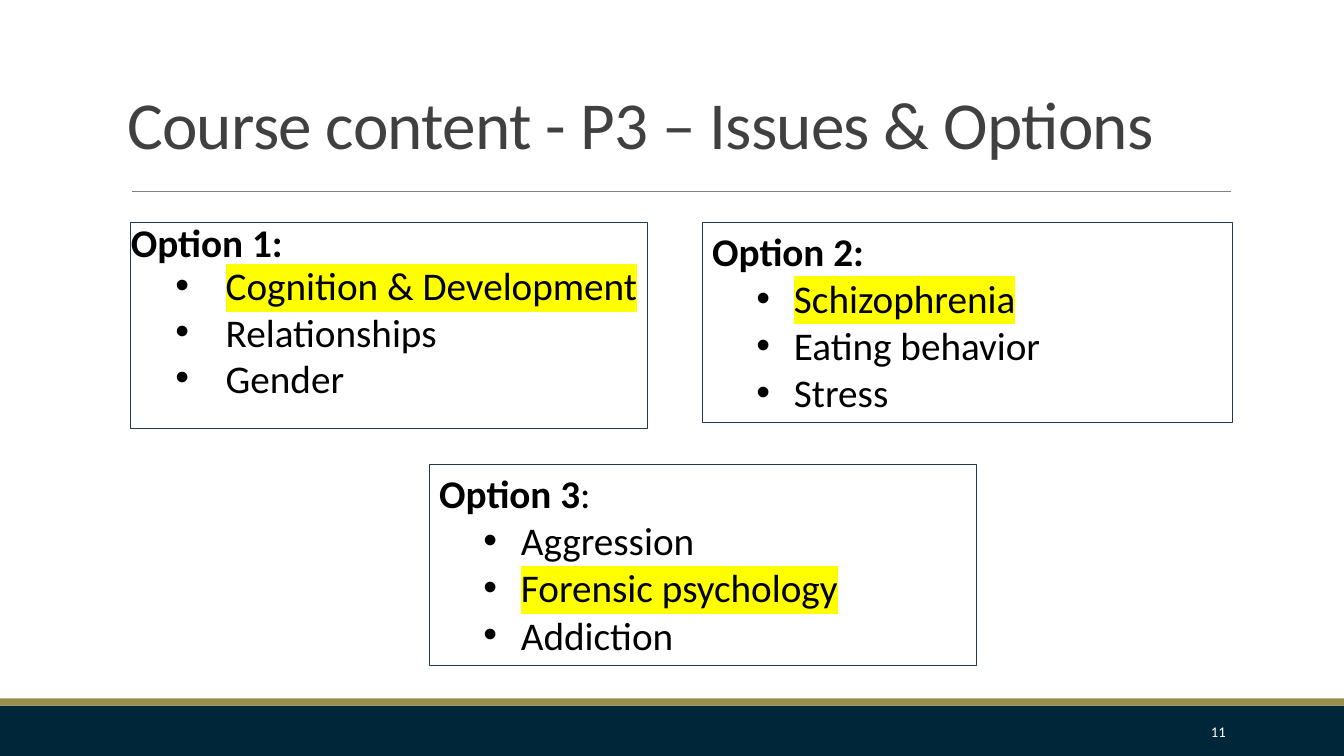
from dataclasses import dataclass
from typing import Any

from lxml.etree import SubElement
from pptx import Presentation
from pptx.dml.color import RGBColor
from pptx.enum.shapes import MSO_CONNECTOR, MSO_SHAPE
from pptx.enum.text import MSO_ANCHOR, MSO_AUTO_SIZE, PP_ALIGN
from pptx.oxml.ns import qn
from pptx.slide import Slide
from pptx.text.text import _Paragraph as Paragraph
from pptx.util import Cm, Pt

NAVY = RGBColor(0x00, 0x26, 0x39)
GOLD = RGBColor(0x99, 0x8F, 0x4D)
GRAY = RGBColor(0x80, 0x80, 0x80)
DARK_GRAY = RGBColor(0x40, 0x40, 0x40)
BORDER = RGBColor(0x20, 0x3A, 0x4E)
BLACK = RGBColor(0x00, 0x00, 0x00)
WHITE = RGBColor(0xFF, 0xFF, 0xFF)
YELLOW = RGBColor(0xFF, 0xFF, 0x00)

FONT = "Calibri"
SLIDE_WIDTH, SLIDE_HEIGHT = 33.87, 19.05


@dataclass(frozen=True)
class Area:
    left: float
    top: float
    width: float
    height: float

    def lengths(self) -> tuple[Cm, Cm, Cm, Cm]:
        return Cm(self.left), Cm(self.top), Cm(self.width), Cm(self.height)


@dataclass(frozen=True)
class Band:
    area: Area
    color: RGBColor


@dataclass(frozen=True)
class TextLayout:
    indent: float
    hanging: float
    side_margin: float
    heading: dict[str, Any]
    topic: dict[str, Any]


@dataclass(frozen=True)
class OptionBox:
    area: Area
    heading: str
    colon_bold: bool
    topics: tuple[str, ...]
    highlighted: str
    layout: TextLayout


ROOMY = TextLayout(2.06, 0.95, 0.25, {}, {})
TIGHT = TextLayout(
    2.39, 1.27, 0,
    {"line_spacing": 0.8, "space_before": Pt(12), "space_after": Pt(2)},
    {"line_spacing": 0.8, "space_before": Pt(2), "space_after": Pt(4)},
)

BANDS = (
    Band(Area(0, 17.78, SLIDE_WIDTH, 1.27), NAVY),
    Band(Area(0, 17.6, SLIDE_WIDTH, 0.18), GOLD),
)
OPTIONS = (
    OptionBox(Area(3.3, 5.61, 13.03, 5.18), "Option 1", True,
              ("Cognition & Development", "Relationships", "Gender"),
              "Cognition & Development", TIGHT),
    OptionBox(Area(10.82, 11.71, 13.79, 5.05), "Option 3", False,
              ("Aggression", "Forensic psychology", "Addiction"),
              "Forensic psychology", ROOMY),
    OptionBox(Area(17.7, 5.61, 13.36, 5.05), "Option 2", True,
              ("Schizophrenia", "Eating behavior", "Stress"),
              "Schizophrenia", ROOMY),
)


def apply_format(target: Any, values: dict[str, Any]) -> None:
    for name, value in values.items():
        setattr(target, name, value)


def add_run(paragraph: Paragraph, text: str, size: float, color: RGBColor,
            bold: bool = False) -> Any:
    run = paragraph.add_run()
    run.text = text
    apply_format(run.font, {"name": FONT, "size": Pt(size), "bold": bold})
    run.font.color.rgb = color
    return run._r.get_or_add_rPr()


def add_highlight(properties: Any, color: RGBColor) -> None:
    highlight = SubElement(properties, qn("a:highlight"))
    SubElement(highlight, qn("a:srgbClr"), val=str(color))
    properties.find(qn("a:solidFill")).addnext(highlight)


def add_bullet(paragraph: Paragraph, layout: TextLayout) -> None:
    properties = paragraph._p.get_or_add_pPr()
    properties.set("marL", str(Cm(layout.indent)))
    properties.set("indent", str(-Cm(layout.hanging)))
    SubElement(properties, qn("a:buFont"), typeface="Arial")
    SubElement(properties, qn("a:buChar"), char="•")


def draw_band(slide: Slide, band: Band) -> None:
    shape = slide.shapes.add_shape(MSO_SHAPE.RECTANGLE, *band.area.lengths())
    shape.shadow.inherit = False
    shape.fill.solid()
    shape.fill.fore_color.rgb = band.color
    shape.line.fill.background()


def draw_rule(slide: Slide) -> None:
    connector = slide.shapes.add_connector(
        MSO_CONNECTOR.STRAIGHT, Cm(3.33), Cm(4.83), Cm(31.01), Cm(4.83))
    connector.line.color.rgb = GRAY
    connector.line.width = Pt(0.5)
    SubElement(connector._element.spPr, qn("a:effectLst"))


def draw_title(slide: Slide, text: str) -> None:
    title = slide.shapes.title
    left, top, width, height = Area(2.95, 0.2, 27.94, 4.04).lengths()
    apply_format(title, {"left": left, "top": top, "width": width, "height": height})
    apply_format(title.text_frame, {
        "auto_size": MSO_AUTO_SIZE.NONE,
        "vertical_anchor": MSO_ANCHOR.BOTTOM,
        "word_wrap": True,
    })
    paragraph = title.text_frame.paragraphs[0]
    apply_format(paragraph, {"alignment": PP_ALIGN.LEFT, "line_spacing": 0.85})
    add_run(paragraph, text, 48, DARK_GRAY).set("spc", "-50")


def draw_option(slide: Slide, option: OptionBox) -> None:
    shape = slide.shapes.add_textbox(*option.area.lengths())
    shape.line.color.rgb = BORDER
    shape.line.width = Pt(0.75)
    frame = shape.text_frame
    margin = Cm(option.layout.side_margin)
    apply_format(frame, {"word_wrap": True, "margin_left": margin, "margin_right": margin})
    heading = frame.paragraphs[0]
    apply_format(heading, option.layout.heading)
    add_run(heading, option.heading, 28, BLACK, True)
    add_run(heading, ":", 28, BLACK, option.colon_bold)
    for topic in option.topics:
        paragraph = frame.add_paragraph()
        apply_format(paragraph, {"level": 1, **option.layout.topic})
        add_bullet(paragraph, option.layout)
        properties = add_run(paragraph, topic, 28, BLACK)
        if topic == option.highlighted:
            add_highlight(properties, YELLOW)


def draw_page_number(slide: Slide, text: str) -> None:
    shape = slide.shapes.add_textbox(*Area(27.51, 17.93, 3.63, 1.02).lengths())
    apply_format(shape.text_frame, {"word_wrap": True, "vertical_anchor": MSO_ANCHOR.MIDDLE})
    paragraph = shape.text_frame.paragraphs[0]
    paragraph.alignment = PP_ALIGN.RIGHT
    add_run(paragraph, text, 10.5, WHITE)


def main() -> None:
    presentation = Presentation()
    apply_format(presentation, {
        "slide_width": Cm(SLIDE_WIDTH), "slide_height": Cm(SLIDE_HEIGHT)})
    slide = presentation.slides.add_slide(presentation.slide_layouts[5])
    for band in BANDS:
        draw_band(slide, band)
    draw_rule(slide)
    draw_title(slide, "Course content - P3 – Issues & Options")
    for option in OPTIONS:
        draw_option(slide, option)
    draw_page_number(slide, "11")
    presentation.save("out.pptx")


if __name__ == "__main__":
    main()
